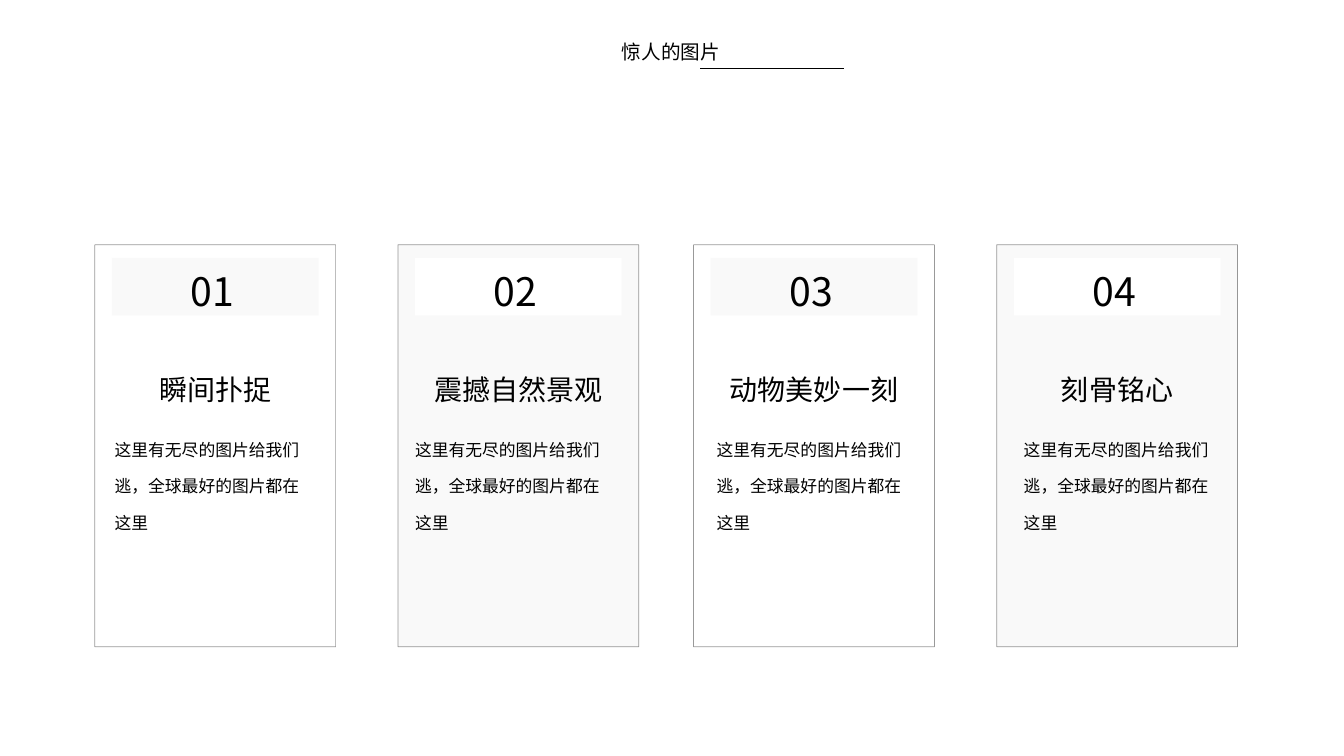
from lxml import etree
from pptx import Presentation
from pptx.dml.color import RGBColor
from pptx.enum.shapes import MSO_CONNECTOR, MSO_SHAPE
from pptx.enum.text import MSO_AUTO_SIZE
from pptx.oxml.ns import qn
from pptx.util import Cm, Pt

RECT = MSO_SHAPE.RECTANGLE
STRAIGHT = MSO_CONNECTOR.STRAIGHT
FIT_SHAPE = MSO_AUTO_SIZE.SHAPE_TO_FIT_TEXT

COLORS = {"black": "000000", "white": "FFFFFF", "grey": "F9F9F9"}
SANS, CJK = "Noto Sans", "Noto Sans CJK SC"
BODY = "这里有无尽的图片给我们逃，全球最好的图片都在这里"

# Card left, body text left (cm), title
CARDS = [
    (2.39, 2.64, "瞬间扑捉"),
    (10.03, 10.21, "震撼自然景观"),
    (17.48, 17.81, "动物美妙一刻"),
    (25.12, 25.55, "刻骨铭心"),
]
CARD_TOP, CARD_W, CARD_H = 6.17, 6.07, 10.13
BADGE_W, BADGE_H = 5.21, 1.45
NUMBER_W = 1.73
CM_PER_PT = 2.54 / 72
SIDE_INSETS = 0.51


class Deck:
    """Holds the style and the current slide."""

    def __init__(self, slide):
        self.shapes = slide.shapes

    def color(self, name):
        return RGBColor.from_string(COLORS[name])

    def rect(self, x, y, w, h, fill, outlined=False):
        sp = self.shapes.add_shape(RECT, Cm(x), Cm(y), Cm(w), Cm(h))
        sp.shadow.inherit = False
        sp.fill.solid()
        sp.fill.fore_color.rgb = self.color(fill)
        if not outlined:
            sp.line.fill.background()
            return
        sp.line.width = Pt(0.5)
        sp.line.color.rgb = self.color("black")
        # Outline at 40 % opacity
        rgb = sp.line._ln.find(".//" + qn("a:srgbClr"))
        etree.SubElement(rgb, qn("a:alpha")).set("val", "40000")

    def text(self, x, y, w, h, text, size, font=SANS, wrap=False, spacing=None):
        tf = self.shapes.add_textbox(Cm(x), Cm(y), Cm(w), Cm(h)).text_frame
        tf.word_wrap = wrap
        tf.auto_size = FIT_SHAPE
        p = tf.paragraphs[0]
        p.text = text
        if spacing:
            p.line_spacing = Pt(spacing)
        r = p.runs[0]
        r.font.size = Pt(size)
        r.font.name = font
        r.font.color.rgb = self.color("black")
        etree.SubElement(r.font._element, qn("a:ea")).set("typeface", font)

    def line(self, x1, y1, x2, y2):
        c = self.shapes.add_connector(STRAIGHT, Cm(x1), Cm(y1), Cm(x2), Cm(y2))
        c.line.width = Pt(0.5)
        c.line.color.rgb = self.color("black")
        etree.SubElement(c._element.spPr, qn("a:effectLst"))


def main():
    prs = Presentation()
    prs.slide_width, prs.slide_height = Cm(33.87), Cm(19.05)
    deck = Deck(prs.slides.add_slide(prs.slide_layouts[6]))

    # Numbered cards, alternating white and grey
    for i, (x, body_x, title) in enumerate(CARDS):
        fill, badge = ("grey", "white") if i % 2 else ("white", "grey")
        center = x + CARD_W / 2
        deck.rect(x, CARD_TOP, CARD_W, CARD_H, fill, outlined=True)
        deck.rect(center - BADGE_W / 2, 6.5, BADGE_W, BADGE_H, badge)
        deck.text(center - NUMBER_W / 2, 6.6, NUMBER_W, 1.45, f"{i + 1:02}", 28, CJK)
        title_w = len(title) * 20 * CM_PER_PT + SIDE_INSETS
        deck.text(center - title_w / 2, 9.25, title_w, 1.12, title, 20)
        deck.text(body_x, 10.54, 5.21, 2.92, BODY, 12, wrap=True, spacing=26)

    # Slide title with its rule
    deck.text(15.42, 0.89, 3, 0.86, "惊人的图片", 14)
    deck.line(17.65, 1.73, 21.26, 1.73)

    prs.save("out.pptx")


if __name__ == "__main__":
    main()
